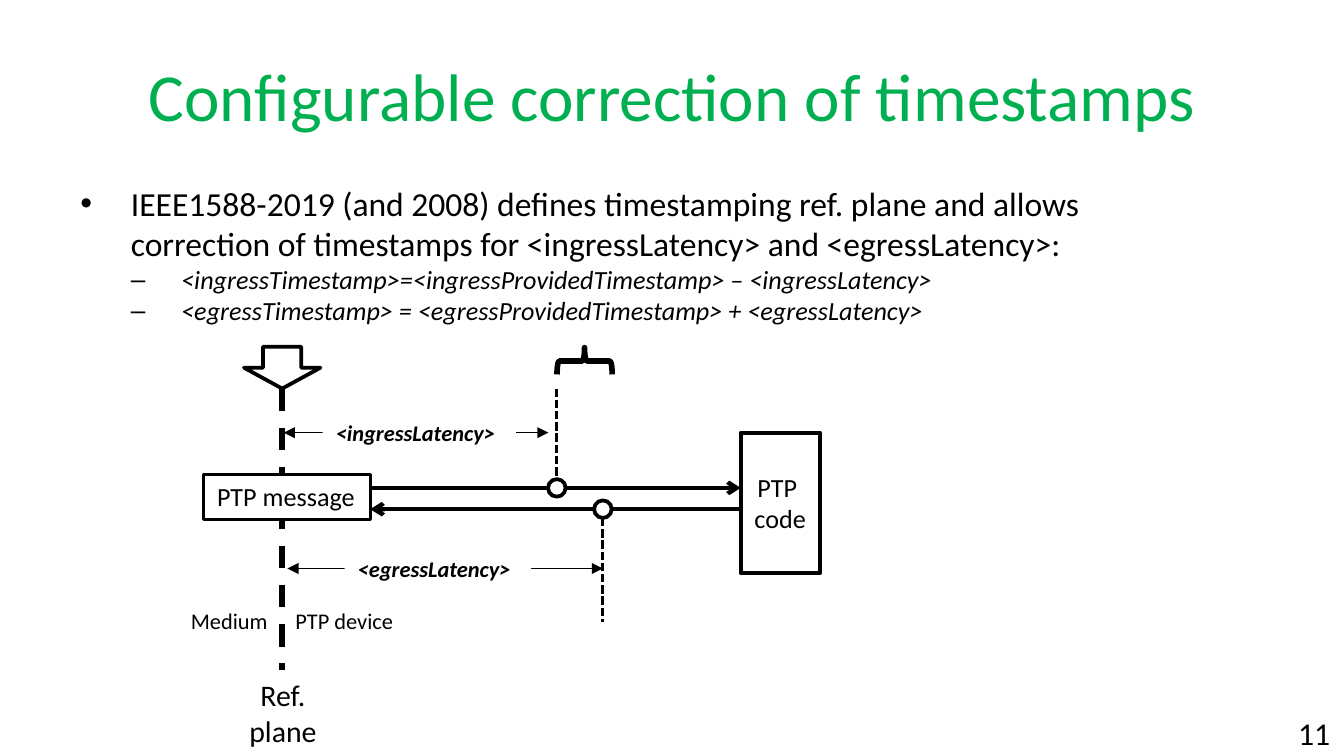
from pptx import Presentation
from pptx.dml.color import RGBColor
from pptx.enum import dml, shapes, text
from pptx.oxml.ns import qn
from pptx.util import Pt
from lxml import etree

COLORS = {"title": "00B050", "ink": "000000", "paper": "FFFFFF"}
FONT = "Calibri"
LEFT, CENTER = text.PP_ALIGN.LEFT, text.PP_ALIGN.CENTER
TOP, MIDDLE = text.MSO_ANCHOR.TOP, text.MSO_ANCHOR.MIDDLE
DASH, SHORT = dml.MSO_LINE.DASH, dml.MSO_LINE.SQUARE_DOT
KIND = shapes.MSO_SHAPE

REF_X, INGRESS_X, EGRESS_X = 151.2, 298.3, 323
INGRESS_Y, EGRESS_Y = 261.4, 272.8
MESSAGE = (109.2, 254, 89.2, 24.4)
CODE = (396.8, 231.8, 42.4, 75.2)
WIRE_LEFT, WIRE_RIGHT = MESSAGE[0] + MESSAGE[2], CODE[0]
DOT = 9.4
STEM_TOP = 208.2

TITLE = "Configurable correction of timestamps"
BODY = [
    ("•", 27, dict(size=Pt(18)),
     "IEEE1588-2019 (and 2008) defines timestamping ref. plane and allows "
     "correction of timestamps for <ingressLatency> and <egressLatency>:"),
    ("–", 54, dict(size=Pt(14), italic=True),
     "<ingressTimestamp>=<ingressProvidedTimestamp> – <ingressLatency>"),
    ("–", 54, dict(size=Pt(14), italic=True),
     "<egressTimestamp> = <egressProvidedTimestamp> + <egressLatency>"),
]
LABELS = [
    ((688.3, 378.6, 31.7, 28.2), ["11"], 17, LEFT),
    ((126, 359.2, 51.2, 46), ["Ref.", "plane"], 16, CENTER),
    ((REF_X, 321.8, 67.6, 21.8), ["PTP device"], 12, LEFT),
    ((95.2, 321.8, 56, 21.8), ["Medium"], 12, LEFT),
]
LATENCIES = [
    ((172.8, 221, 103.6, 21.8), "<ingressLatency>"),
    ((184.6, 293.6, 100, 21.8), "<egressLatency>"),
]
REF_LINE = (REF_X, STEM_TOP, REF_X, 359.2, 3, DASH, {})
WIRES = [
    (WIRE_LEFT, INGRESS_Y, WIRE_RIGHT, INGRESS_Y, 2.25, None, {"tailEnd": "arrow"}),
    (WIRE_RIGHT, EGRESS_Y, WIRE_LEFT, EGRESS_Y, 2.25, None, {"tailEnd": "arrow"}),
]
BOTH = {"headEnd": "triangle", "tailEnd": "triangle"}
MEASURES = [
    (INGRESS_X, STEM_TOP, INGRESS_X, INGRESS_Y - DOT / 2, 1.5, SHORT, {}),
    (EGRESS_X, EGRESS_Y + DOT / 2, EGRESS_X, 333.2, 1.5, SHORT, {}),
    (152, 231.8, 293.8, 231.8, 0.75, None, BOTH),
    (154, 304.6, EGRESS_X, 304.6, 0.75, None, BOTH),
]


def rgb(name):
    return RGBColor.from_string(COLORS[name])


def apply(target, values):
    for name, value in values.items():
        setattr(target, name, value)


def pts(values):
    return [Pt(round(v, 2)) for v in values]


def write(sp, lines, align=LEFT, anchor=TOP, wrap=False, color="ink", **font):
    tf = sp.text_frame
    apply(tf, dict(word_wrap=wrap, vertical_anchor=anchor))
    for i, line in enumerate(lines):
        p = tf.paragraphs[0] if i == 0 else tf.add_paragraph()
        p.alignment = align
        r = p.add_run()
        r.text = line
        apply(r.font, dict(name=FONT, **font))
        r.font.color.rgb = rgb(color)
    return tf


def add_shape(s, kind, box, weight=None, fill="paper"):
    sp = s.shapes.add_shape(kind, *pts(box))
    sp.shadow.inherit = False
    if fill:
        sp.fill.solid()
        sp.fill.fore_color.rgb = rgb(fill)
    else:
        sp.fill.background()
    if weight:
        sp.line.color.rgb = rgb("ink")
        sp.line.width = Pt(weight)
    else:
        sp.line.fill.background()
    return sp


def add_line(s, x1, y1, x2, y2, weight, dash, ends):
    sp = s.shapes.add_connector(shapes.MSO_CONNECTOR.STRAIGHT, *pts((x1, y1, x2, y2)))
    sp.line.color.rgb = rgb("ink")
    apply(sp.line, dict(width=Pt(weight), dash_style=dash))
    ln = sp.line._get_or_add_ln()
    for tag, kind in ends.items():
        etree.SubElement(ln, qn("a:" + tag), type=kind)
    etree.SubElement(sp._element.spPr, qn("a:effectLst"))


def add_body(s):
    sp = s.shapes.add_textbox(*pts((36, 94.3, 573.2, 310.3)))
    tf = write(sp, [row[3] for row in BODY], wrap=True)
    for p, (bullet, margin, font, _) in zip(tf.paragraphs, BODY):
        apply(p.runs[0].font, font)
        pPr = p._p.get_or_add_pPr()
        pPr.set("marL", str(Pt(margin)))
        pPr.set("indent", str(-Pt(27)))
        etree.SubElement(pPr, qn("a:buFont"), typeface="Arial")
        etree.SubElement(pPr, qn("a:buChar"), char=bullet)


def main():
    prs = Presentation()
    apply(prs, dict(slide_width=Pt(720), slide_height=Pt(405)))
    s = prs.slides.add_slide(prs.slide_layouts[6])

    title = s.shapes.add_textbox(*pts((36, 16.6, 648, 67.6)))
    write(title, [TITLE], CENTER, MIDDLE, True, "title", size=Pt(36))
    add_body(s)

    add_line(s, *REF_LINE)
    code = add_shape(s, KIND.RECTANGLE, CODE, 2.25, None)
    write(code, ["PTP ", "code"], CENTER, size=Pt(14)).margin_top = Pt(20.7)
    message = add_shape(s, KIND.RECTANGLE, MESSAGE, 1.5)
    write(message, ["PTP message"], size=Pt(14))

    for line in WIRES:
        add_line(s, *line)
    for x, y in ((INGRESS_X, INGRESS_Y), (EGRESS_X, EGRESS_Y)):
        add_shape(s, KIND.OVAL, (x - DOT / 2, y - DOT / 2, DOT, DOT), 2)
    for line in MEASURES:
        add_line(s, *line)
    for box, label in LATENCIES:
        sp = add_shape(s, KIND.RECTANGLE, box)
        write(sp, [label], size=Pt(12), bold=True, italic=True)

    add_shape(s, KIND.DOWN_ARROW, (REF_X - 20.5, 185.8, 41, 22.4), 2)
    brace = add_shape(s, KIND.RIGHT_BRACE, (306, 178.6, 14.4, 29.6), 3, None)
    brace.rotation = 270

    for box, lines, size, align in LABELS:
        write(s.shapes.add_textbox(*pts(box)), lines, align, size=Pt(size))
    prs.save("out.pptx")


if __name__ == "__main__":
    main()
